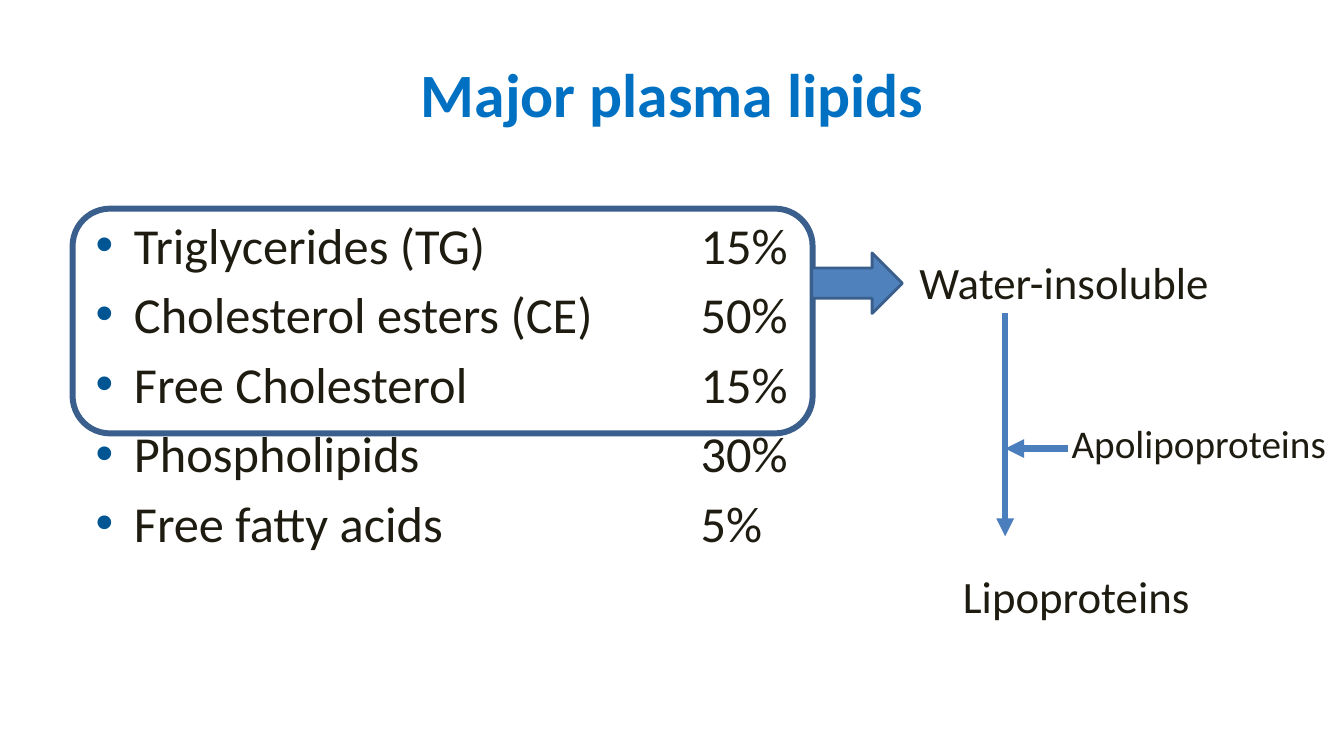
from lxml.etree import SubElement
from pptx import Presentation
from pptx.dml.color import RGBColor
from pptx.enum.shapes import MSO_CONNECTOR, MSO_SHAPE
from pptx.enum.text import MSO_ANCHOR, PP_ALIGN
from pptx.oxml.ns import qn
from pptx.util import Inches, Pt

COLORS = {
    "title": "0071C2",
    "text": "1E1C11",
    "bullet": "005592",
    "outline": "3A5F8C",
    "arrow": "4F81BD",
    "line": "4B7EBC",
}
LIPIDS = [
    ("Triglycerides (TG)", "15%"),
    ("Cholesterol esters (CE)", "50%"),
    ("Free Cholesterol", "15%"),
    ("Phospholipids", "30%"),
    ("Free fatty acids", "5%"),
]


def rgb(name):
    return RGBColor.from_string(COLORS[name])


class LipidSlide:
    font = "Calibri"

    def __init__(self, presentation):
        self.slide = presentation.slides.add_slide(presentation.slide_layouts[6])

    def frame(self, box, anchor=MSO_ANCHOR.TOP):
        text_frame = self.slide.shapes.add_textbox(*map(Inches, box)).text_frame
        text_frame.word_wrap = True
        text_frame.vertical_anchor = anchor
        return text_frame

    def run(self, paragraph, text, size, color="text", bold=False):
        run = paragraph.add_run()
        run.text = text
        run.font.name = self.font
        run.font.size = Pt(size)
        run.font.bold = bold
        run.font.color.rgb = rgb(color)

    def label(self, text, box, size, align=PP_ALIGN.LEFT, anchor=MSO_ANCHOR.TOP, **style):
        paragraph = self.frame(box, anchor).paragraphs[0]
        paragraph.alignment = align
        self.run(paragraph, text, size, **style)

    def bulleted_values(self, rows, box, size, value_tab):
        """Bulleted names, each with its value at a common tab stop."""
        text_frame = self.frame(box)
        for index, row in enumerate(rows):
            paragraph = text_frame.add_paragraph() if index else text_frame.paragraphs[0]
            paragraph.space_before = Pt(6.5)
            properties = paragraph._p.get_or_add_pPr()
            properties.set("marL", str(Inches(0.38)))
            properties.set("indent", str(Inches(-0.38)))
            bullet_color = SubElement(properties, qn("a:buClr"))
            SubElement(bullet_color, qn("a:srgbClr"), val=COLORS["bullet"])
            SubElement(properties, qn("a:buFont"), typeface="Arial")
            SubElement(properties, qn("a:buChar"), char="•")
            tabs = SubElement(properties, qn("a:tabLst"))
            SubElement(tabs, qn("a:tab"), pos=str(Inches(value_tab)), algn="l")
            self.run(paragraph, "\t".join(row), size)

    def shape(self, preset, box, line_width, fill=None):
        shape = self.slide.shapes.add_shape(preset, *map(Inches, box))
        shape.shadow.inherit = False
        if fill:
            shape.fill.solid()
            shape.fill.fore_color.rgb = rgb(fill)
        else:
            shape.fill.background()
        shape.line.color.rgb = rgb("outline")
        shape.line.width = Pt(line_width)

    def arrow(self, start, end, width):
        connector = self.slide.shapes.add_connector(
            MSO_CONNECTOR.STRAIGHT, *map(Inches, start + end))
        connector.line.color.rgb = rgb("line")
        connector.line.width = Pt(width)
        SubElement(connector.line._get_or_add_ln(), qn("a:tailEnd"), type="triangle")
        SubElement(connector._element.spPr, qn("a:effectLst"))


def main():
    presentation = Presentation()
    presentation.slide_width = Inches(13.33)
    presentation.slide_height = Inches(7.5)
    page = LipidSlide(presentation)

    page.label("Major plasma lipids", (0.67, 0.3, 12, 1.25), 44, PP_ALIGN.CENTER,
               MSO_ANCHOR.MIDDLE, color="title", bold=True)
    page.bulleted_values(LIPIDS, (0.85, 2.07, 8.56, 4.95), 36, value_tab=6)
    page.shape(MSO_SHAPE.ROUNDED_RECTANGLE, (0.72, 2.07, 7.34, 2.23), 4.25)
    page.shape(MSO_SHAPE.RIGHT_ARROW, (8.05, 2.51, 0.9, 0.6), 2, fill="arrow")

    page.label("Water-insoluble", (9.02, 2.48, 3.92, 0.64), 32)
    page.arrow((9.97, 3.11), (9.97, 5.32), 4.25)
    page.label("Lipoproteins", (8.05, 5.59, 5.25, 0.64), 32, PP_ALIGN.CENTER)
    page.arrow((10.59, 4.45), (9.97, 4.45), 4.5)
    page.label("Apolipoproteins", (10.53, 4.11, 2.8, 0.57), 28)

    presentation.save("out.pptx")


if __name__ == "__main__":
    main()
